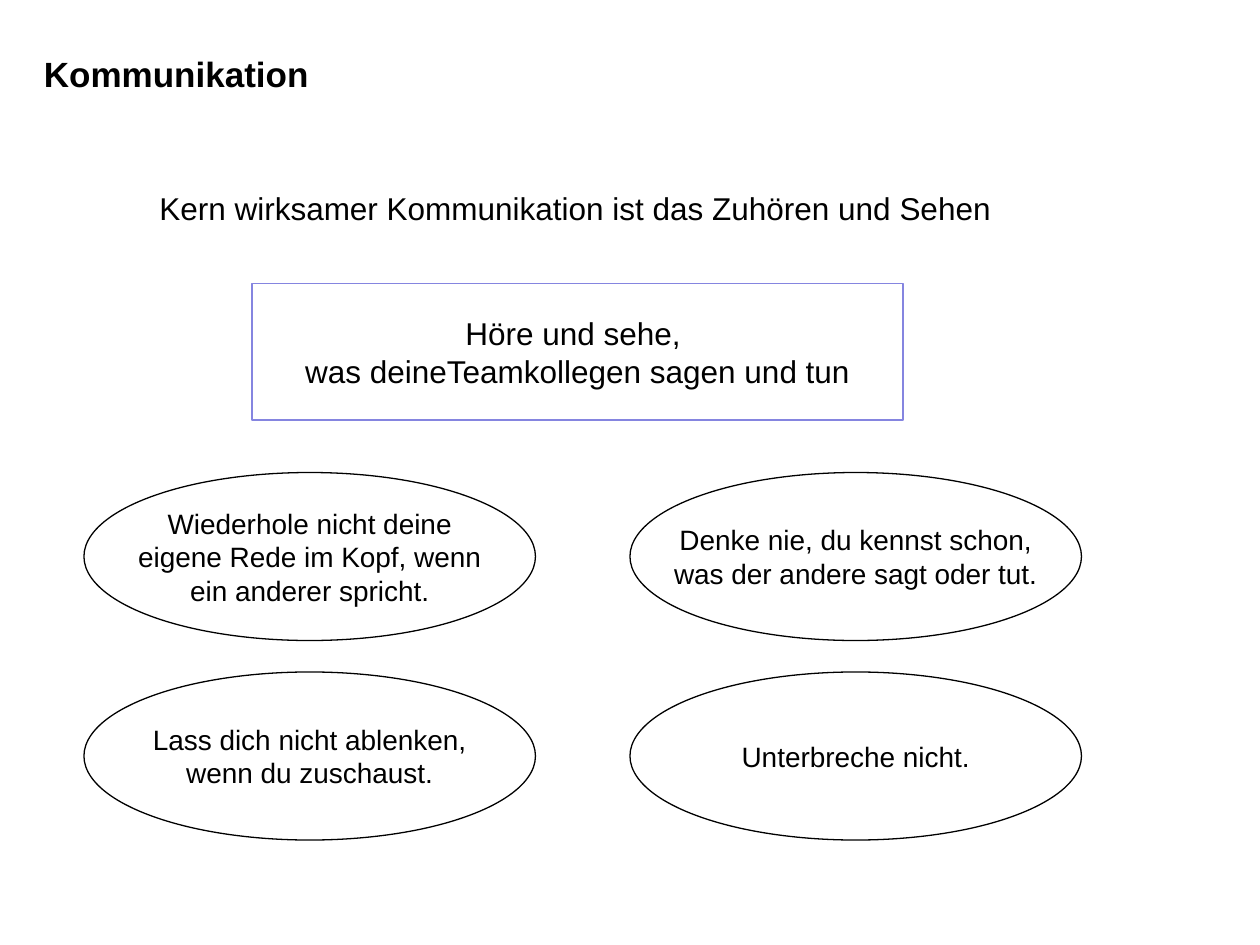
from pptx import Presentation
from pptx.dml.color import RGBColor
from pptx.enum.shapes import MSO_SHAPE
from pptx.enum.text import MSO_ANCHOR, PP_ALIGN
from pptx.util import Inches, Pt

COLORS = {"text": "000000", "paper": "FFFFFF", "frame": "8585E0", "outline": "000000"}
FONT = "Arial"
COLS, ROWS = 120, 90  # grid units across and down the slide
WIDTH, HEIGHT = Inches(10), Inches(7.5)


def color(name):
    return RGBColor.from_string(COLORS[name])


def place(box):
    """Turn a box in grid units into slide lengths."""
    x, y, w, h = box
    return (round(WIDTH * x / COLS), round(HEIGHT * y / ROWS),
            round(WIDTH * w / COLS), round(HEIGHT * h / ROWS))


def write(tf, lines, size, align, bold=False):
    for i, line in enumerate(lines):
        p = tf.paragraphs[0] if i == 0 else tf.add_paragraph()
        p.text = line
        p.alignment = align
        for r in p.runs:
            r.font.name = FONT
            r.font.size = Pt(size)
            r.font.bold = bold
            r.font.color.rgb = color("text")


def text_line(s, box, text, size, bold=False):
    tf = s.shapes.add_textbox(*place(box)).text_frame
    tf.word_wrap = True
    tf.margin_top = Inches(0.08)
    write(tf, [text], size, PP_ALIGN.LEFT, bold)


def outlined_shape(s, kind, box, lines, size, line_color):
    sp = s.shapes.add_shape(kind, *place(box))
    sp.shadow.inherit = False
    sp.fill.solid()
    sp.fill.fore_color.rgb = color("paper")
    sp.line.color.rgb = color(line_color)
    sp.line.width = Pt(0.75)
    tf = sp.text_frame
    tf.word_wrap = False
    tf.vertical_anchor = MSO_ANCHOR.MIDDLE
    write(tf, lines, size, PP_ALIGN.CENTER)


def rule_grid(s, box, rules, gap_x, gap_y):
    """Fill the box with equal ellipses, one per rule."""
    x, y, w, h = box
    cell_w = (w - gap_x * (len(rules[0]) - 1)) / len(rules[0])
    cell_h = (h - gap_y * (len(rules) - 1)) / len(rules)
    for row, entries in enumerate(rules):
        for col, lines in enumerate(entries):
            cell = (x + col * (cell_w + gap_x), y + row * (cell_h + gap_y), cell_w, cell_h)
            outlined_shape(s, MSO_SHAPE.OVAL, cell, lines, 16, "outline")


def main():
    prs = Presentation()
    prs.slide_width, prs.slide_height = WIDTH, HEIGHT
    s = prs.slides.add_slide(prs.slide_layouts[6])

    # Title and opening statement
    text_line(s, (3, 4, 102, 5), "Kommunikation", 20, bold=True)
    text_line(s, (14, 17, 82, 4.8),
              "Kern wirksamer Kommunikation ist das Zuhören und Sehen", 18)

    # Framed key message
    outlined_shape(s, MSO_SHAPE.RECTANGLE, (24, 27, 62, 13),
                   ["Höre und sehe, ", "was deineTeamkollegen sagen und tun"], 18, "frame")

    # Four listening rules
    rules = [
        [["Wiederhole nicht deine", "eigene Rede im Kopf, wenn", "ein anderer spricht."],
         ["Denke nie, du kennst schon,", "was der andere sagt oder tut."]],
        [["Lass dich nicht ablenken,", "wenn du zuschaust."],
         ["Unterbreche nicht."]],
    ]
    rule_grid(s, (8, 45, 95, 35), rules, gap_x=9, gap_y=3)

    prs.save("out.pptx")


if __name__ == "__main__":
    main()
